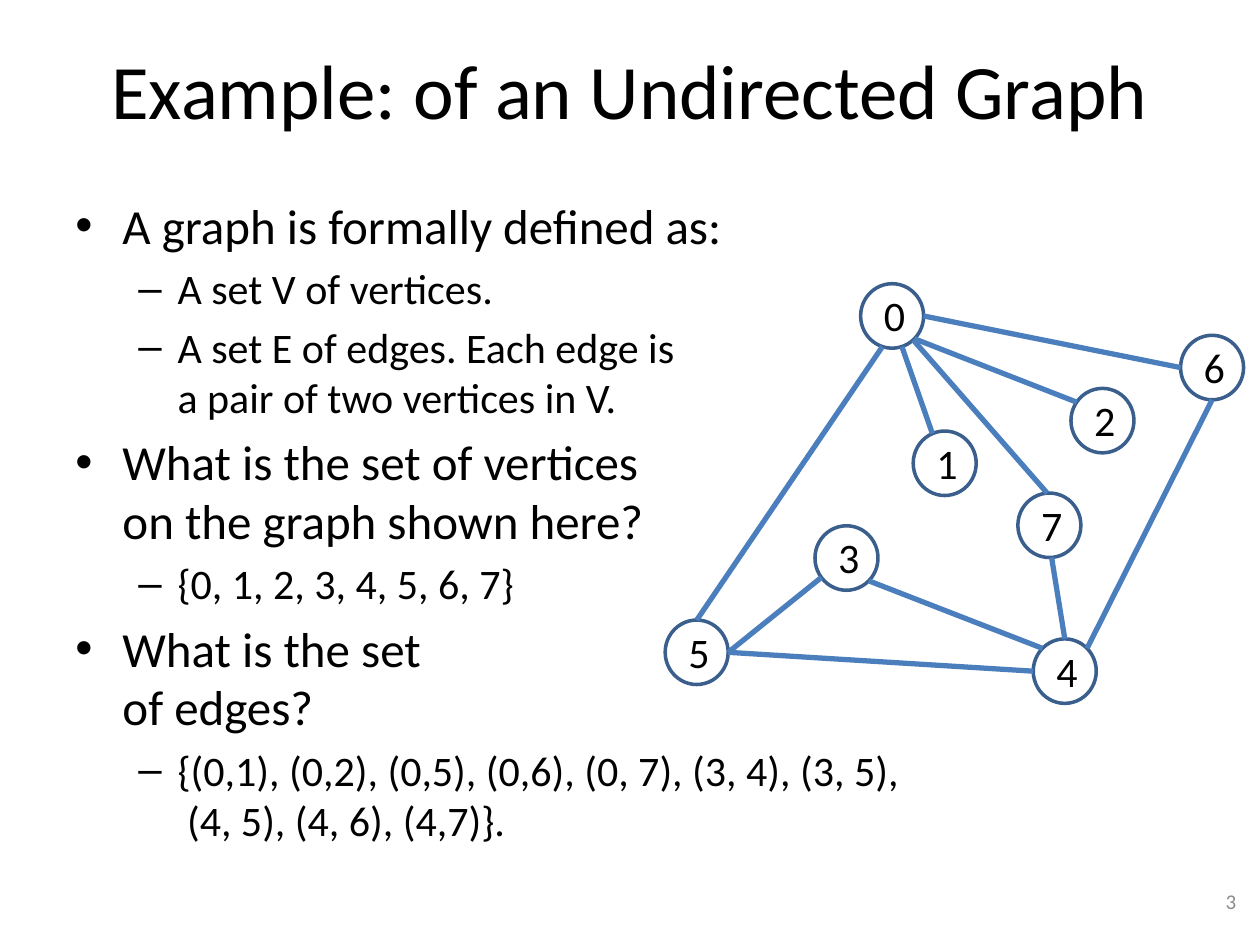
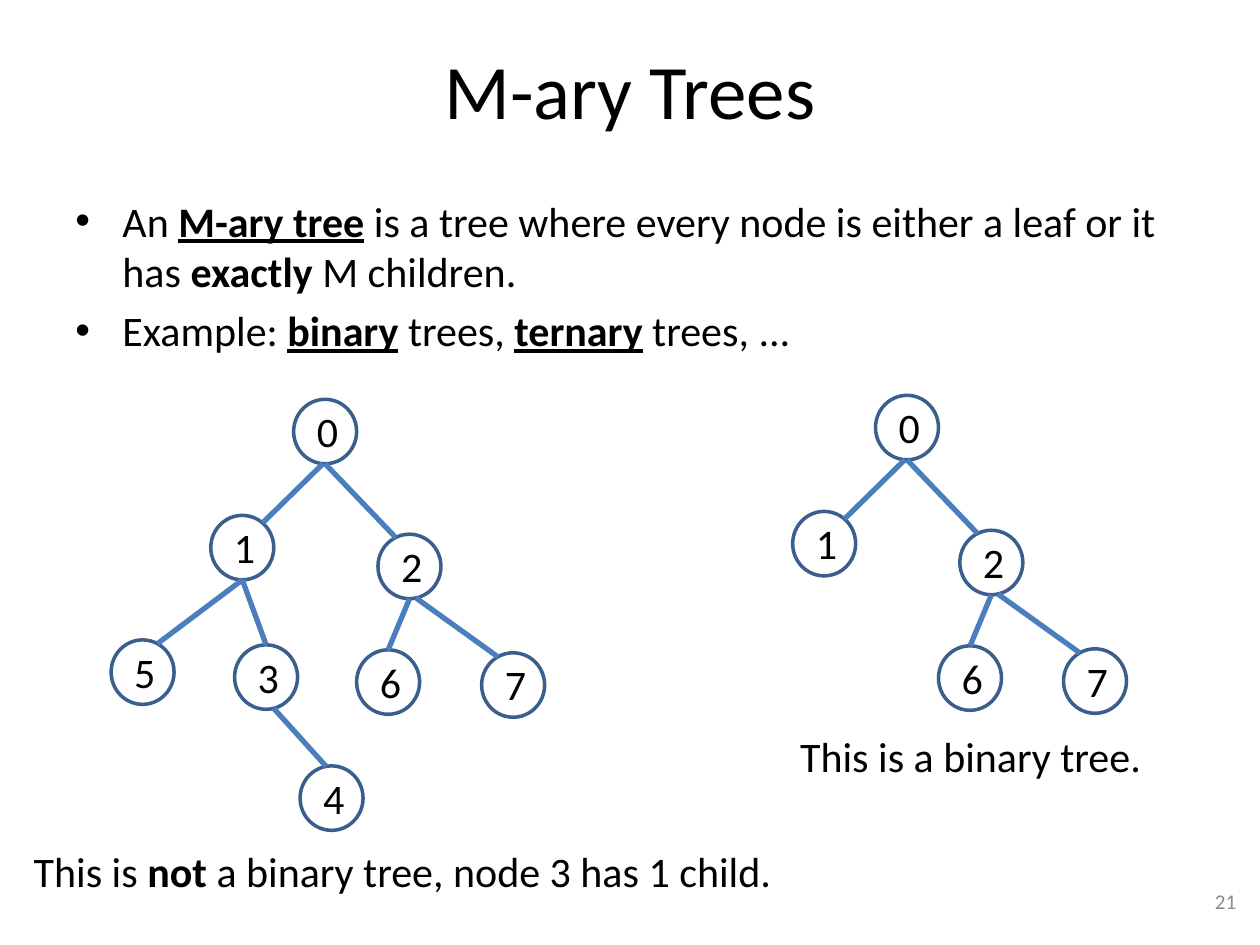
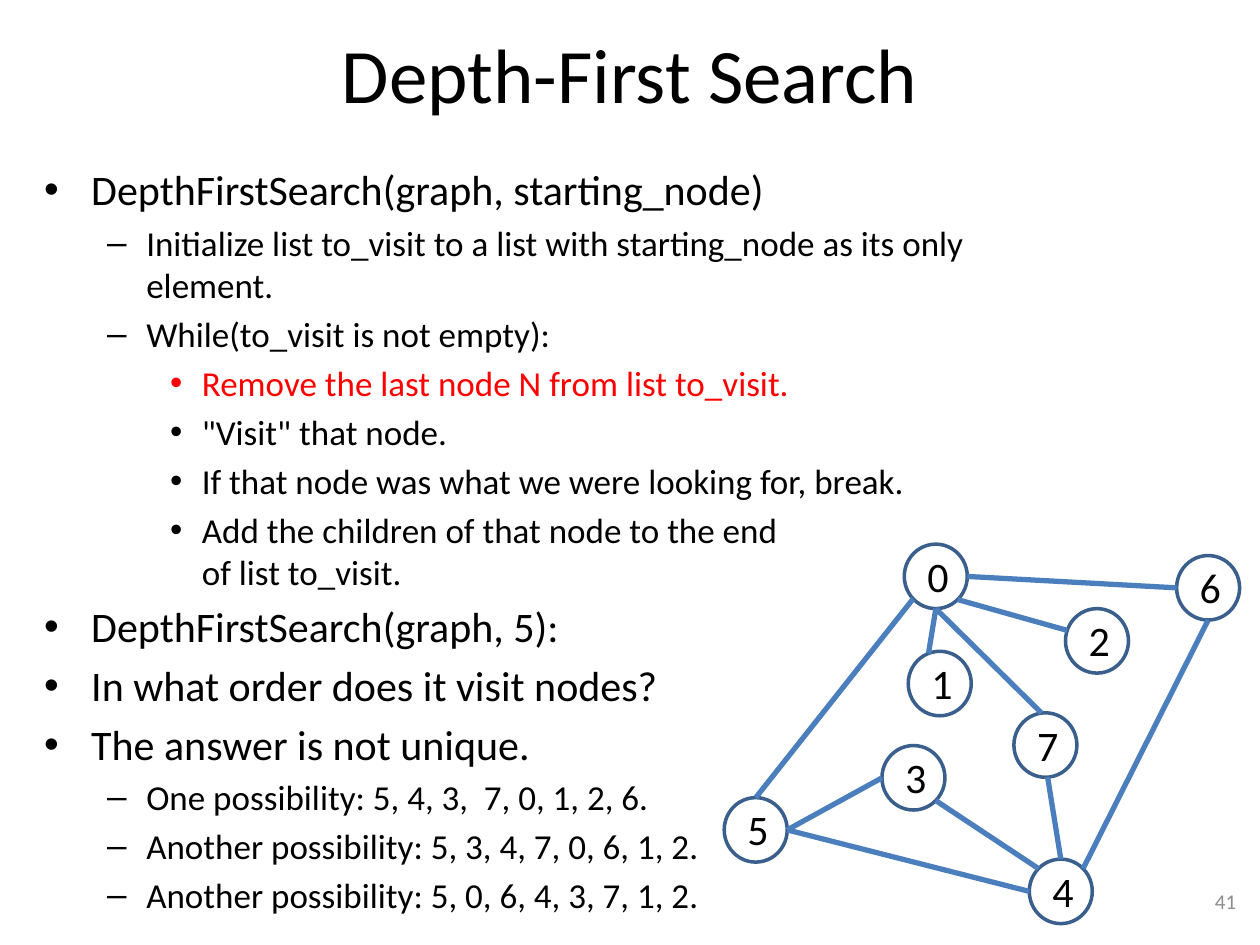
from dataclasses import dataclass
from math import cos, radians, sin
from typing import NamedTuple, Optional

from lxml.etree import SubElement
from pptx import Presentation
from pptx.dml.color import RGBColor
from pptx.enum.shapes import MSO_CONNECTOR, MSO_SHAPE
from pptx.enum.text import MSO_ANCHOR, MSO_AUTO_SIZE, PP_ALIGN
from pptx.oxml.ns import qn
from pptx.util import Cm, Pt


@dataclass(frozen=True)
class Theme:
    font: str = "Calibri"
    bullet_font: str = "Arial"
    text: RGBColor = RGBColor(0x00, 0x00, 0x00)
    alert: RGBColor = RGBColor(0xFF, 0x00, 0x00)
    muted: RGBColor = RGBColor(0x8C, 0x8C, 0x8C)
    node_line: RGBColor = RGBColor(0x3A, 0x5F, 0x8C)
    edge_line: RGBColor = RGBColor(0x4B, 0x7E, 0xBC)
    title_size: int = 44
    large_size: int = 28
    body_size: int = 24
    small_size: int = 20
    number_size: int = 12
    node_width: float = 2
    edge_width: float = 3


THEME = Theme()


class Box(NamedTuple):
    """A region in centimetres."""
    left: float
    top: float
    width: float
    height: float


class Span(NamedTuple):
    """A stretch of text with its own formatting."""
    text: str
    bold: bool = False
    underline: bool = False
    color: Optional[RGBColor] = None


class BulletLevel(NamedTuple):
    mark: str
    margin: float
    hanging: float


BULLET_LEVELS = [
    BulletLevel("•", 0.95, 0.95),
    BulletLevel("–", 2.06, 0.79),
    BulletLevel("•", 3.18, 0.64),
]

TITLE_BOX = Box(1.27, 0.2, 22.86, 3.18)
NUMBER_BOX = Box(19.25, 17.65, 5.92, 1.02)
NODE_WIDTH, NODE_HEIGHT = 1.27, 1.3
LABEL_WIDTH = 1.17

# Edges map a pair of nodes to the angles, clockwise from the right,
# at which the line leaves the first node and meets the second.
GRAPH_EDGES = {
    (0, 6): (0, 180), (0, 2): (45, 215), (0, 1): (72, 247),
    (0, 5): (108, 270), (0, 7): (48, 266), (5, 3): (0, 143),
    (5, 4): (0, 180), (3, 4): (45, 225), (7, 4): (86, 270),
    (6, 4): (90, 315),
}
SEARCH_EDGES = GRAPH_EDGES | {
    (0, 2): (46, 199), (0, 1): (90, 249), (0, 5): (136, 270),
    (0, 7): (90, 263), (5, 3): (0, 180),
}
TREE_EDGES = {
    (0, 1): (94, 310), (0, 2): (90, 244), (1, 3): (90, 270),
    (3, 4): (76, 260), (1, 5): (90, 298), (2, 7): (78, 241),
    (2, 6): (90, 270),
}

# Nodes map a number to its top left corner within the diagram.
GRAPH_NODES = {
    0: (3.94, 0), 1: (5, 2.97), 2: (8.18, 2.11), 3: (3.02, 4.88),
    4: (7.42, 7.16), 5: (0, 6.78), 6: (10.39, 1.04), 7: (7.11, 4.22),
}
SEARCH_NODES = {
    0: (3.63, 0), 1: (3.71, 2.16), 2: (6.88, 1.3), 3: (3.18, 4.06),
    4: (6.15, 6.35), 5: (0, 5.11), 6: (9.12, 0.23), 7: (5.84, 3.4),
}
TREE_NODES = {
    0: (3.68, 0), 1: (2.01, 2.34), 2: (5.38, 2.72), 3: (2.49, 4.95),
    4: (3.81, 7.39), 5: (0, 4.85), 6: (4.95, 5.05), 7: (7.47, 5.11),
}
BINARY_TREE_NODES = {number: TREE_NODES[number] for number in (0, 1, 2, 6, 7)}


def fill_paragraph(paragraph, spans, size, color=THEME.text, align=PP_ALIGN.LEFT):
    paragraph.alignment = align
    for span in spans:
        span = Span(span) if isinstance(span, str) else span
        before, *after = span.text.split("\n")
        pieces = [before, *after]
        for index, piece in enumerate(pieces):
            if index:
                paragraph.add_line_break()
            run = paragraph.add_run()
            run.text = piece
            font = run.font
            font.name, font.size = THEME.font, Pt(size)
            font.bold, font.underline = span.bold, span.underline
            font.color.rgb = span.color or color


def add_text_box(shapes, box, anchor=MSO_ANCHOR.TOP, wrap=True):
    """Add an empty text box and return its text frame."""
    text_frame = shapes.add_textbox(*map(Cm, box)).text_frame
    text_frame.word_wrap = wrap
    text_frame.vertical_anchor = anchor
    return text_frame


def add_title(slide, box, title):
    text_frame = add_text_box(slide.shapes, box, MSO_ANCHOR.MIDDLE)
    fill_paragraph(text_frame.paragraphs[0], [title], THEME.title_size,
                   align=PP_ALIGN.CENTER)


def add_slide_number(slide, box, number):
    text_frame = add_text_box(slide.shapes, box, MSO_ANCHOR.MIDDLE)
    fill_paragraph(text_frame.paragraphs[0], [str(number)], THEME.number_size,
                   THEME.muted, PP_ALIGN.RIGHT)


def add_caption(slide, box, *spans):
    text_frame = add_text_box(slide.shapes, box, wrap=False)
    text_frame.auto_size = MSO_AUTO_SIZE.SHAPE_TO_FIT_TEXT
    fill_paragraph(text_frame.paragraphs[0], spans, THEME.body_size)


def set_bullet(paragraph, level):
    bullet = BULLET_LEVELS[level]
    paragraph.level = level
    properties = paragraph._p.get_or_add_pPr()
    properties.set("marL", str(Cm(bullet.margin)))
    properties.set("indent", str(-Cm(bullet.hanging)))
    SubElement(properties, qn("a:buFont")).set("typeface", THEME.bullet_font)
    SubElement(properties, qn("a:buChar")).set("char", bullet.mark)


def add_bullets(slide, box, sizes, items):
    """Add items of (level, span, ...); sizes holds one type size per level."""
    text_frame = add_text_box(slide.shapes, box)
    for index, (level, *spans) in enumerate(items):
        paragraph = text_frame.add_paragraph() if index else text_frame.paragraphs[0]
        paragraph.space_before = Pt(0.2 * sizes[level])
        set_bullet(paragraph, level)
        fill_paragraph(paragraph, spans, sizes[level])


def add_node(shapes, left, top, number):
    circle = shapes.add_shape(MSO_SHAPE.OVAL, Cm(left), Cm(top),
                              Cm(NODE_WIDTH), Cm(NODE_HEIGHT))
    circle.shadow.inherit = False
    circle.fill.background()
    circle.line.color.rgb = THEME.node_line
    circle.line.width = Pt(THEME.node_width)
    text_frame = add_text_box(shapes, Box(left, top, LABEL_WIDTH, 1.27))
    fill_paragraph(text_frame.paragraphs[0], [f" {number}"], THEME.body_size,
                   align=PP_ALIGN.CENTER)


def rim_point(left, top, angle):
    """Return the point on a node's outline at the angle."""
    return (Cm(left + NODE_WIDTH / 2 * (1 + cos(radians(angle)))),
            Cm(top + NODE_HEIGHT / 2 * (1 + sin(radians(angle)))))


def add_edge(shapes, start, end):
    connector = shapes.add_connector(MSO_CONNECTOR.STRAIGHT, *start, *end)
    connector.line.color.rgb = THEME.edge_line
    connector.line.width = Pt(THEME.edge_width)
    SubElement(connector._element.spPr, qn("a:effectLst"))


def add_diagram(slide, left, top, nodes, edges):
    """Add a group of nodes and the edges whose two ends are among them."""
    shapes = slide.shapes.add_group_shape().shapes
    corners = {number: (left + x, top + y) for number, (x, y) in nodes.items()}
    for number, corner in corners.items():
        add_node(shapes, *corner, number)
    for (first, second), (leaving, meeting) in edges.items():
        if first in corners and second in corners:
            add_edge(shapes, rim_point(*corners[first], leaving),
                     rim_point(*corners[second], meeting))


def add_titled_slide(presentation, title, number, title_box=TITLE_BOX):
    slide = presentation.slides.add_slide(presentation.slide_layouts[6])
    add_title(slide, title_box, title)
    add_slide_number(slide, NUMBER_BOX, number)
    return slide


def add_graph_slide(presentation):
    slide = add_titled_slide(presentation, "Example: of an Undirected Graph", 3)
    add_bullets(slide, Box(1.27, 3.81, 22.86, 4.65),
                (THEME.large_size, THEME.body_size), [
        (0, "A graph is formally defined as:"),
        (1, "A set V of vertices."),
        (1, "A set E of edges. Each edge is\na pair of two vertices in V."),
        (0, "What is the set of vertices\non the graph shown here?"),
        (1, "{0, 1, 2, 3, 4, 5, 6, 7}"),
        (0, "What is the set\nof edges?"),
        (1, "{(0,1), (0,2), (0,5), (0,6), (0, 7), (3, 4), (3, 5),\n"
            " (4, 5), (4, 6), (4,7)}."),
    ])
    add_diagram(slide, 13.41, 5.72, GRAPH_NODES, GRAPH_EDGES)


def add_trees_slide(presentation):
    slide = add_titled_slide(presentation, "M-ary Trees", 21)
    add_bullets(slide, Box(1.27, 3.81, 22.86, 13.97), (THEME.body_size,), [
        (0, "An ", Span("M-ary tree", bold=True, underline=True),
         " is a tree where every node is either a leaf or it has ",
         Span("exactly", bold=True), " M children."),
        (0, "Example: ", Span("binary", bold=True, underline=True), " trees, ",
         Span("ternary", bold=True, underline=True), " trees, ..."),
    ])
    add_diagram(slide, 2.24, 8.05, TREE_NODES, TREE_EDGES)
    add_diagram(slide, 13.97, 7.97, BINARY_TREE_NODES, TREE_EDGES)
    add_caption(slide, Box(0.43, 16.92, 15.49, 1.27), "This is ",
                Span("not", bold=True), " a binary tree, node 3 has 1 child.")
    add_caption(slide, Box(15.88, 14.6, 7.44, 1.27), "This is a binary tree.")


def add_search_slide(presentation):
    slide = add_titled_slide(presentation, "Depth-First Search", 41,
                             TITLE_BOX._replace(height=2.54))
    add_bullets(slide, Box(0.64, 3.18, 20.85, 13.97),
                (THEME.body_size, THEME.small_size, THEME.small_size), [
        (0, "DepthFirstSearch(graph, starting_node)"),
        (1, "Initialize list to_visit to a list with starting_node "
            "as its only element."),
        (1, "While(to_visit is not empty):"),
        (2, Span("Remove the last node N from list to_visit.", color=THEME.alert)),
        (2, "\"Visit\" that node."),
        (2, "If that node was what we were looking for, break."),
        (2, "Add the children of that node to the end\nof list to_visit."),
        (0, "DepthFirstSearch(graph, 5):"),
        (0, "In what order does it visit nodes?"),
        (0, "The answer is not unique."),
        (1, "One possibility: 5, 4, 3,  7, 0, 1, 2, 6."),
        (1, "Another possibility: 5, 3, 4, 7, 0, 6, 1, 2."),
        (1, "Another possibility: 5, 0, 6, 4, 3, 7, 1, 2."),
    ])
    add_diagram(slide, 14.6, 10.97, SEARCH_NODES, SEARCH_EDGES)


def main():
    presentation = Presentation()
    presentation.slide_width, presentation.slide_height = Cm(25.4), Cm(19.05)
    add_graph_slide(presentation)
    add_trees_slide(presentation)
    add_search_slide(presentation)
    presentation.save("out.pptx")


if __name__ == "__main__":
    main()
